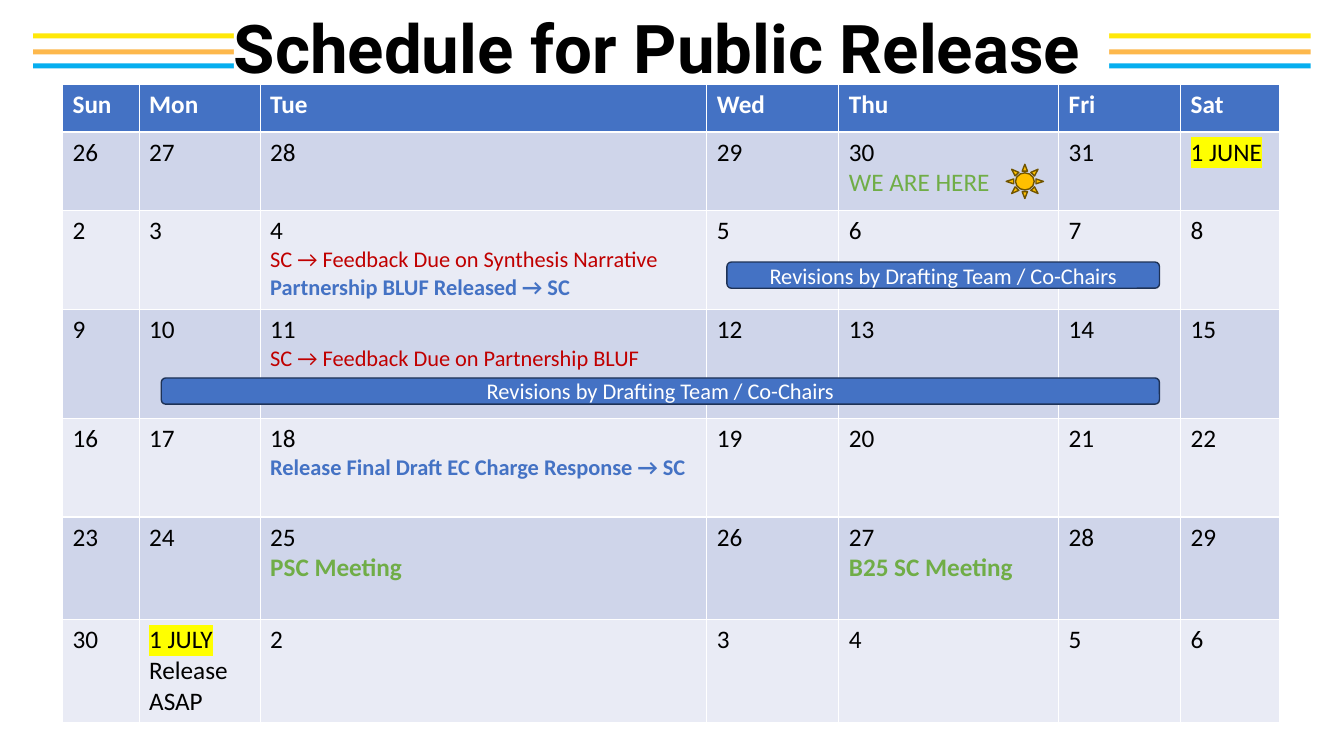
from lxml import etree
from pptx import Presentation
from pptx import util as u
from pptx.dml.color import RGBColor
from pptx.enum import shapes, text
from pptx.oxml.ns import qn

WHITE = RGBColor(0xFF, 0xFF, 0xFF)
BLACK = RGBColor(0, 0, 0)
BLUE = RGBColor(0x44, 0x72, 0xC4)
NAVY = RGBColor(0x1E, 0x32, 0x56)
RED = RGBColor(0xC0, 0, 0)
GREEN = RGBColor(0x70, 0xAD, 0x47)
YELLOW = RGBColor(0xFF, 0xE8, 0x09)
ORANGE = RGBColor(0xFD, 0xB8, 0x4C)
SKY = RGBColor(0x06, 0xAE, 0xEF)
GOLD = RGBColor(0xFF, 0xC0, 0)
BROWN = RGBColor(0x70, 0x54, 0)
BANDS = RGBColor(0xCF, 0xD5, 0xEA), RGBColor(0xE9, 0xEB, 0xF5)
MARKER = "FFFF00"

TITLE = "Schedule for Public Release"
STRIPES = [(0.33, YELLOW), (0.49, ORANGE), (0.63, SKY)]
WEEKDAYS = ["Sun", "Mon", "Tue", "Wed", "Thu", "Fri", "Sat"]
DATES = [*range(26, 32), *range(1, 31), *range(1, 7)]
MONTH_STARTS = {(1, 6): "1 JUNE", (6, 1): "1 JULY"}
# (week, weekday): lines of (wording, size, colour, bold)
EVENTS = {
    (1, 4): [("WE ARE HERE", 18, GREEN, False)],
    (2, 2): [("SC → Feedback Due on Synthesis Narrative", 16, RED, False),
             ("Partnership BLUF Released → SC", 16, BLUE, True)],
    (3, 2): [("SC → Feedback Due on Partnership BLUF", 16, RED, False)],
    (4, 2): [("Release Final Draft EC Charge Response → SC", 16, BLUE, True)],
    (5, 2): [("PSC Meeting", 18, GREEN, True)],
    (5, 4): [("B25 SC Meeting", 18, GREEN, True)],
}
RELEASE_DAY, RELEASE_NOTE = (6, 1), "Release ASAP"
REVISION = "Revisions by Drafting Team / Co-Chairs"
REVISION_BARS = [(7.21, 2.6), (1.6, 3.75)]  # left, top
REVISION_END = 11.5

COLUMNS = [0.76, 1.2, 4.43, 1.31, 2.18, 1.21, 0.98]
ROWS = [0.47, 0.78, 0.98, 1.08, 0.98, 1.02, 1.01]
TABLE_LEFT, TABLE_TOP = 0.62, 0.84


def add_span(para, wording, size, color, bold=False, font="Calibri", marker=None):
    span = para.add_run()
    span.text = wording
    span.font.size = u.Pt(size)
    span.font.bold = bold
    span.font.color.rgb = color
    if marker:
        highlight = etree.SubElement(span.font._element, qn("a:highlight"))
        etree.SubElement(highlight, qn("a:srgbClr"), val=marker)
    span.font.name = font


def add_block(page, kind, place, fill, line=None):
    block = page.shapes.add_shape(kind, *(u.Inches(length) for length in place))
    block.shadow.inherit = False
    block.fill.solid()
    block.fill.fore_color.rgb = fill
    if line is None:
        block.line.fill.background()
    else:
        block.line.color.rgb = line
        block.line.width = u.Pt(1)
    return block


def add_heading(page):
    for top, color in STRIPES:
        add_block(page, shapes.MSO_SHAPE.RECTANGLE, (0.33, top, 12.67, 0.05), color)
    box = add_block(page, shapes.MSO_SHAPE.RECTANGLE, (2.32, 0.15, 8.68, 0.73), WHITE)
    frame = box.text_frame
    frame.margin_left = frame.margin_right = frame.margin_top = frame.margin_bottom = 0
    frame.vertical_anchor = text.MSO_ANCHOR.MIDDLE
    para = frame.paragraphs[0]
    para.alignment = text.PP_ALIGN.LEFT
    para.line_spacing = 0.9
    add_span(para, TITLE, 48, BLACK, True, "Roboto")


def fill_day(frame, week, weekday):
    day = week, weekday
    para = frame.paragraphs[0]
    if day in MONTH_STARTS:
        add_span(para, MONTH_STARTS[day], 18, BLACK, marker=MARKER)
    else:
        number = DATES[(week - 1) * len(WEEKDAYS) + weekday]
        add_span(para, str(number), 18, BLACK)
    if day == RELEASE_DAY:
        para.add_line_break()
        add_span(para, RELEASE_NOTE, 18, BLACK)
    for event in EVENTS.get(day, []):
        add_span(frame.add_paragraph(), *event)


def add_calendar(page):
    place = TABLE_LEFT, TABLE_TOP, sum(COLUMNS), sum(ROWS)
    calendar = page.shapes.add_table(
        len(ROWS), len(COLUMNS), *(u.Inches(length) for length in place)).table
    for column, width in zip(calendar.columns, COLUMNS):
        column.width = u.Inches(width)
    for week, height in enumerate(ROWS):
        calendar.rows[week].height = u.Inches(height)
        for weekday, name in enumerate(WEEKDAYS):
            cell = calendar.cell(week, weekday)
            cell.fill.solid()
            if week == 0:
                cell.fill.fore_color.rgb = BLUE
                add_span(cell.text_frame.paragraphs[0], name, 18, WHITE, True)
            else:
                cell.fill.fore_color.rgb = BANDS[(week - 1) % 2]
                fill_day(cell.text_frame, week, weekday)


def add_marks(page):
    add_block(page, shapes.MSO_SHAPE.SUN, (9.98, 1.63, 0.37, 0.34), GOLD, BROWN)
    for left, top in REVISION_BARS:
        bar = add_block(page, shapes.MSO_SHAPE.ROUNDED_RECTANGLE,
                        (left, top, REVISION_END - left, 0.26), BLUE, NAVY)
        bar.text_frame.vertical_anchor = text.MSO_ANCHOR.MIDDLE
        para = bar.text_frame.paragraphs[0]
        para.alignment = text.PP_ALIGN.CENTER
        add_span(para, REVISION, 16, WHITE)


def main():
    deck = Presentation()
    deck.slide_width, deck.slide_height = u.Inches(13.33), u.Inches(7.5)
    page = deck.slides.add_slide(deck.slide_layouts[6])
    add_heading(page)
    add_calendar(page)
    add_marks(page)
    deck.save("out.pptx")


if __name__ == "__main__":
    main()
